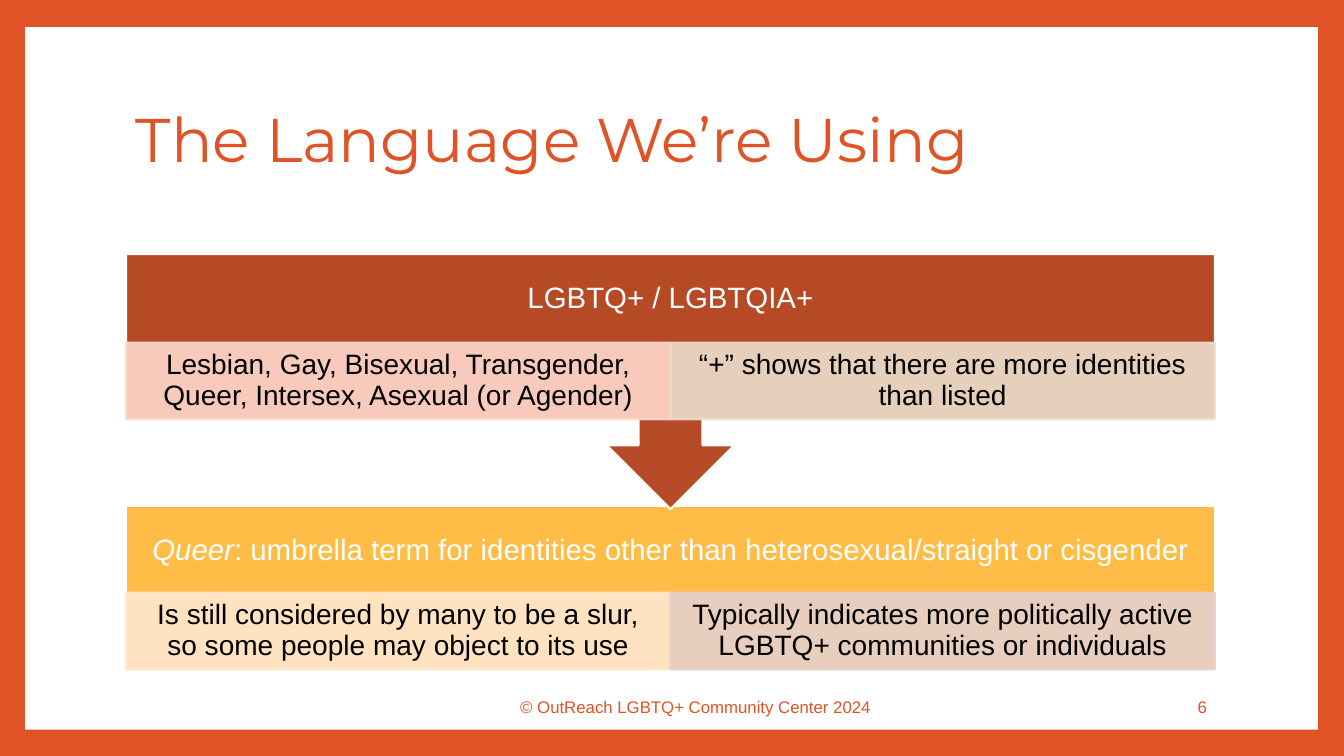
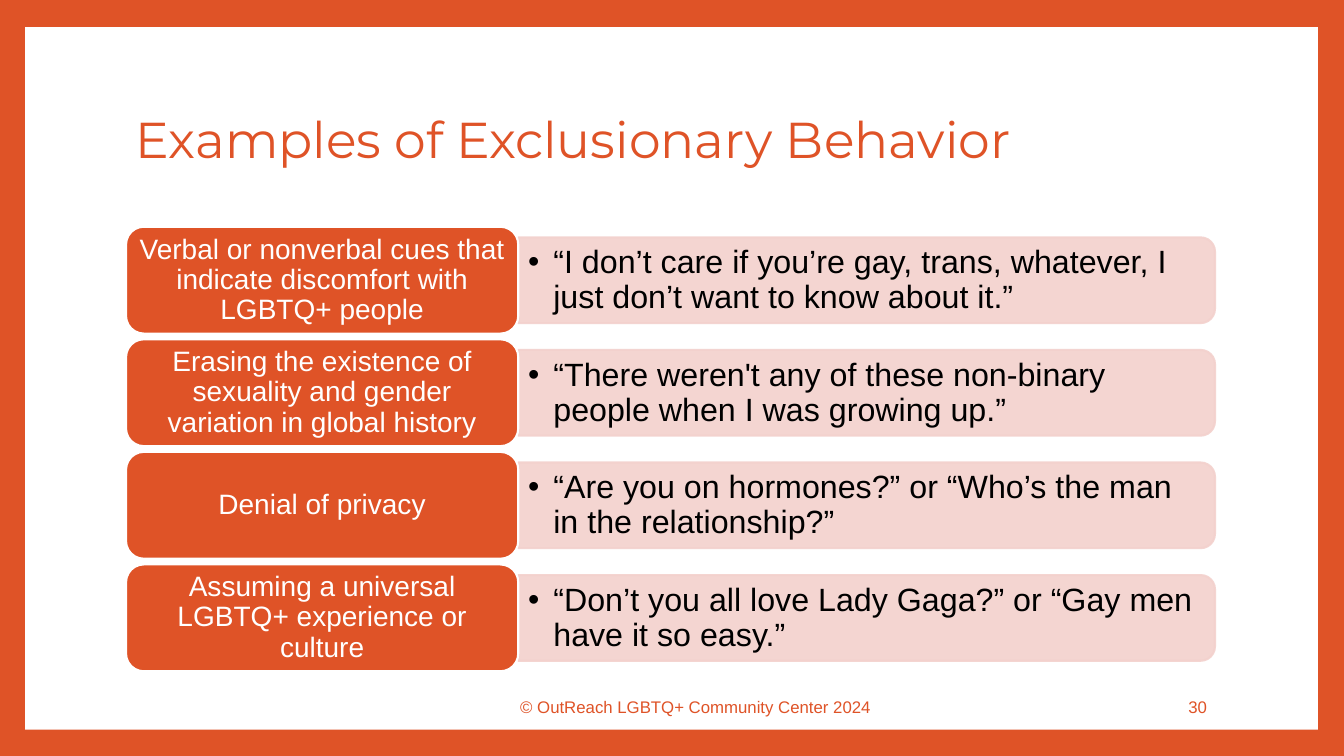
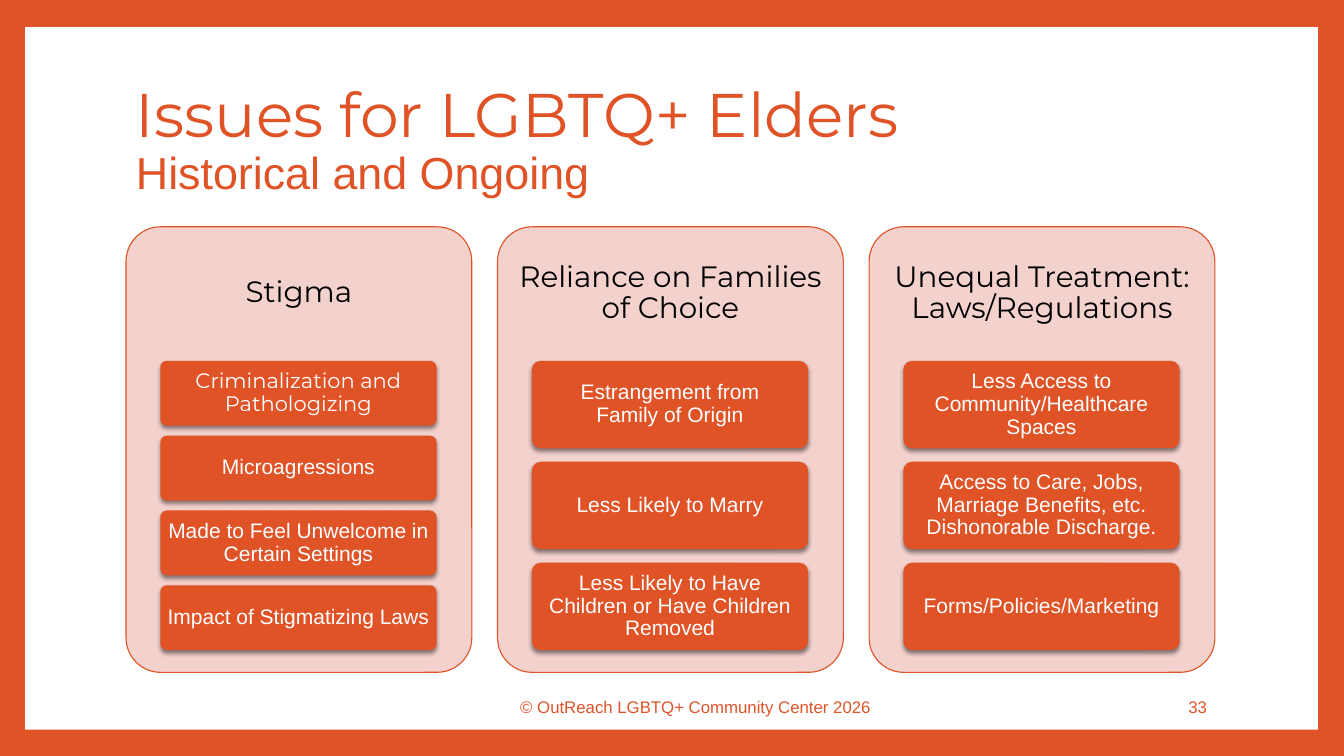
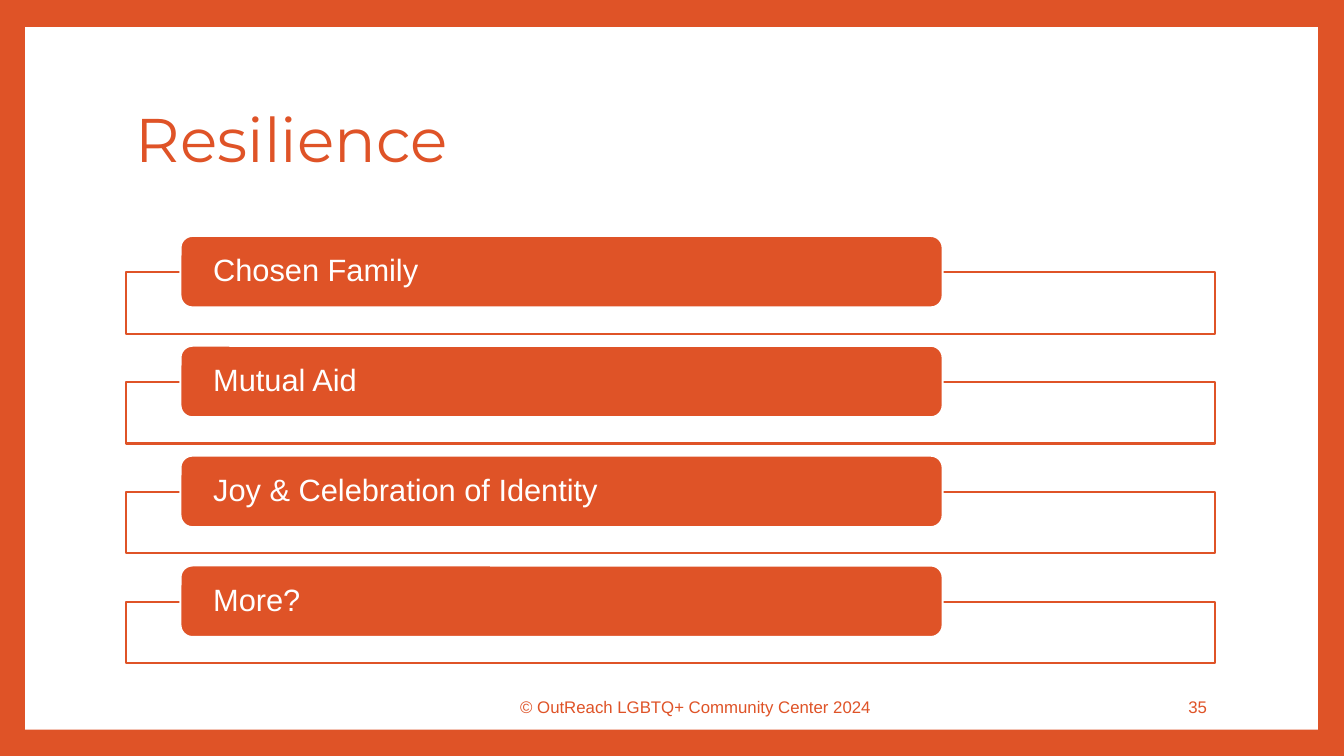
from lxml import etree
from pptx import Presentation
from pptx.dml.color import RGBColor
from pptx.enum import shapes, text
from pptx.oxml import ns
from pptx.util import Inches, Pt

# Shared style
ORANGE, WHITE, BLACK, BLUSH = "DF5327", "FFFFFF", "000000", "F3D1CD"
BODY, HEADING = "Arial", "Montserrat"
LEFT, WIDTH = 1.25, 10.8
KIND, ALIGN = shapes.MSO_SHAPE, text.PP_ALIGN
color = RGBColor.from_string


def block(slide, at, kind=None, fill=None, line=None, line_width=1.5, alpha=None):
    """Add a shape, or a text box when no kind is given."""
    place = [Inches(v) for v in at]
    if kind is None:
        return slide.shapes.add_textbox(*place)
    shape = slide.shapes.add_shape(kind, *place)
    shape.shadow.inherit = False
    shape.fill.solid()
    shape.fill.fore_color.rgb = color(fill)
    if line:
        shape.line.color.rgb = color(line)
        shape.line.width = Pt(line_width)
    else:
        shape.line.fill.background()
    if alpha:
        for tint in shape._element.spPr.iter(ns.qn("a:srgbClr")):
            etree.SubElement(tint, ns.qn("a:alpha"), val=str(alpha * 1000))
    return shape


def write(shape, content, size, ink, align=ALIGN.CENTER, insets=(0.1, 0.05),
          spacing=0.9, bullet=None):
    """Fill a shape with one paragraph: a string, or (string, font values) runs."""
    frame = shape.text_frame
    side, end = (Inches(v) for v in insets)
    layout = dict(word_wrap=True, vertical_anchor=text.MSO_ANCHOR.MIDDLE,
                  margin_left=side, margin_right=side, margin_top=end, margin_bottom=end)
    for name, value in layout.items():
        setattr(frame, name, value)
    paragraph = frame.paragraphs[0]
    paragraph.alignment, paragraph.line_spacing = align, spacing
    if bullet:
        props = paragraph._p.get_or_add_pPr()
        props.set("marL", str(Inches(0.25)))
        props.set("indent", str(-Inches(0.25)))
        etree.SubElement(props, ns.qn("a:buFont"), typeface=BODY)
        etree.SubElement(props, ns.qn("a:buChar"), char=bullet)
    runs = [(content, {})] if isinstance(content, str) else content
    for words, values in runs:
        for number, piece in enumerate(words.split("\n")):
            if number:
                paragraph.add_line_break()
            if not piece:
                continue
            run = paragraph.add_run()
            run.text = piece
            run.font.color.rgb = color(ink)
            for name, value in {"name": BODY, "size": Pt(size), **values}.items():
                setattr(run.font, name, value)


deck = Presentation()
deck.slide_width, deck.slide_height = Inches(13.33), Inches(7.5)
backdrop = deck.slide_master.background.fill
backdrop.solid()
backdrop.fore_color.rgb = color(ORANGE)

# Frame, title and footer of every slide
pages = [
    ([("The Language We’re Using", {"name": HEADING})], 44, 2024, 6),
    ([("Examples of Exclusionary Behavior", {"name": HEADING})], 36, 2024, 30),
    ([("Issues for LGBTQ+ Elders\n", {"name": HEADING}),
      ("Historical and Ongoing", {"size": Pt(32)})], 44, 2026, 33),
    ([("Resilience", {"name": HEADING})], 44, 2024, 35),
]
slides = []
for title, title_size, year, page_number in pages:
    slide = deck.slides.add_slide(deck.slide_layouts[6])
    block(slide, (0.25, 0.27, 12.82, 6.97), KIND.RECTANGLE, WHITE)
    write(block(slide, (LEFT, 0.67, WIDTH, 1.48)), title, title_size, ORANGE, ALIGN.LEFT)
    write(block(slide, (4.32, 6.81, 5.16, 0.4)),
          f"© OutReach LGBTQ+ Community Center {year}", 12, ORANGE, spacing=1)
    write(block(slide, (10.2, 6.81, 1.87, 0.4)), str(page_number), 12, ORANGE,
          ALIGN.RIGHT, spacing=1)
    slides.append(slide)
language, behavior, issues, resilience = slides

# Language: two terms, each with two remarks
terms = [
    (KIND.RECTANGLE, 5.02, 1.64, "FFBD47", 5.88,
     [("Queer", {"italic": True}),
      (": umbrella term for identities other than heterosexual/straight or cisgender", {})],
     [("Is still considered by many to be a slur, so some people may object to its use",
       "FFE8CF"),
      ("Typically indicates more politically active LGBTQ+ communities or individuals",
       "E5D0CD")]),
    (KIND.UP_ARROW_CALLOUT, 2.52, 2.53, "B64926", 3.4,
     "LGBTQ+ / LGBTQIA+",
     [("Lesbian, Gay, Bisexual, Transgender, Queer, Intersex, Asexual (or Agender)",
       "FFD9CD"),
      ("“+” shows that there are more identities than listed", "ECDECC")]),
]
for kind, top, height, fill, remark_top, term, remarks in terms:
    panel = block(language, (LEFT, top, WIDTH, height), kind, fill, WHITE)
    if kind == KIND.UP_ARROW_CALLOUT:
        panel.rotation = 180
    write(block(language, (LEFT, top, WIDTH, 0.89)), term, 21, WHITE, insets=(0.16, 0.16))
    for side, (remark, tint) in enumerate(remarks):
        cell = block(language, (LEFT + side * WIDTH / 2, remark_top, WIDTH / 2, 0.76),
                     KIND.RECTANGLE, tint, tint, alpha=90)
        write(cell, remark, 20, BLACK, insets=(0.16, 0.03))

# Behavior: a label and a quote on each row
examples = [
    ("Verbal or nonverbal cues that indicate discomfort with LGBTQ+ people",
     "“I don’t care if you’re gay, trans, whatever, I just don’t want to know about it.”"),
    ("Erasing the existence of sexuality and gender variation in global history",
     "“There weren't any of these non-binary people when I was growing up.”"),
    ("Denial of privacy",
     "“Are you on hormones?” or “Who’s the man in the relationship?”"),
    ("Assuming a universal LGBTQ+ experience or culture",
     "“Don’t you all love Lady Gaga?” or “Gay men have it so easy.”"),
]
label_width, label_height = 3.89, 1.06
quote_width, quote_height = WIDTH - label_width, 0.85
quote_left = LEFT + label_width
for row, (label, quote) in enumerate(examples):
    top = 2.25 + row * 3.35 / 3
    middle = top + label_height / 2
    # The band is drawn upright and turned so that its round corners face right
    band = block(behavior, (quote_left + (quote_width - quote_height) / 2,
                            middle - quote_width / 2, quote_height, quote_width),
                 KIND.ROUND_2_SAME_RECTANGLE, BLUSH, BLUSH, alpha=90)
    band.rotation = 90
    write(block(behavior, (quote_left, middle - 0.38, 6.87, 0.77)), quote, 23, BLACK,
          ALIGN.LEFT, bullet="•")
    tag = block(behavior, (LEFT, top, label_width, label_height),
                KIND.ROUNDED_RECTANGLE, ORANGE, WHITE)
    write(tag, label, 20, WHITE, insets=(0.08, 0.04))

# Issues: three columns of tiles
columns = [
    ("Stigma", ["Criminalization and Pathologizing", "Microagressions",
                "Made to Feel Unwelcome in Certain Settings", "Impact of Stigmatizing Laws"]),
    ("Reliance on Families of Choice",
     ["Estrangement from\nFamily of Origin", "Less Likely to Marry",
      "Less Likely to Have Children or Have Children Removed"]),
    ("Unequal Treatment: Laws/Regulations",
     ["Less Access to\nCommunity/Healthcare Spaces",
      "Access to Care, Jobs, Marriage Benefits, etc. Dishonorable Discharge.",
      "Forms/Policies/Marketing"]),
]
column_width, tiles_height, gap_ratio = 3.43, 2.87, 0.154
for number, (heading, tiles) in enumerate(columns):
    left = LEFT + number * (WIDTH - column_width) / 2
    column = block(issues, (left, 2.25, column_width, 4.42), KIND.ROUNDED_RECTANGLE,
                   BLUSH, ORANGE, 0.79)
    column.adjustments[0] = 0.1
    write(block(issues, (left, 2.25, column_width, 1.32)), [(heading, {"name": HEADING})],
          21, BLACK, insets=(0.09, 0.09))
    tile_height = tiles_height / (len(tiles) + gap_ratio * (len(tiles) - 1))
    for row, issue in enumerate(tiles):
        tile = block(issues, (left + 0.34, 3.58 + row * tile_height * (1 + gap_ratio),
                              2.74, tile_height), KIND.ROUNDED_RECTANGLE, ORANGE)
        tile.adjustments[0] = 0.1
        effects = tile._element.spPr.find(ns.qn("a:effectLst"))
        shadow = etree.SubElement(effects, ns.qn("a:outerShdw"), blurRad=str(Pt(3)),
                                  dist=str(Pt(2)), dir="5400000", rotWithShape="0")
        shade = etree.SubElement(shadow, ns.qn("a:srgbClr"), val=BLACK)
        etree.SubElement(shade, ns.qn("a:alpha"), val="45000")
        face = HEADING if number == row == 0 else BODY
        write(tile, [(issue, {"name": face})], 15, WHITE, insets=(0.04, 0.03))

# Resilience: a label on each outlined bar
sources = ["Chosen Family", "Mutual Aid", "Joy & Celebration of Identity", "More?"]
for row, source in enumerate(sources):
    top = 2.34 + row * 1.09
    block(resilience, (LEFT, top + 0.36, WIDTH, 0.61), KIND.RECTANGLE, WHITE, ORANGE)
    bar = block(resilience, (1.79, top, 7.56, 0.71), KIND.ROUNDED_RECTANGLE, ORANGE, WHITE)
    write(bar, source, 22, WHITE, ALIGN.LEFT, insets=(0.29, 0))

deck.save("out.pptx")
